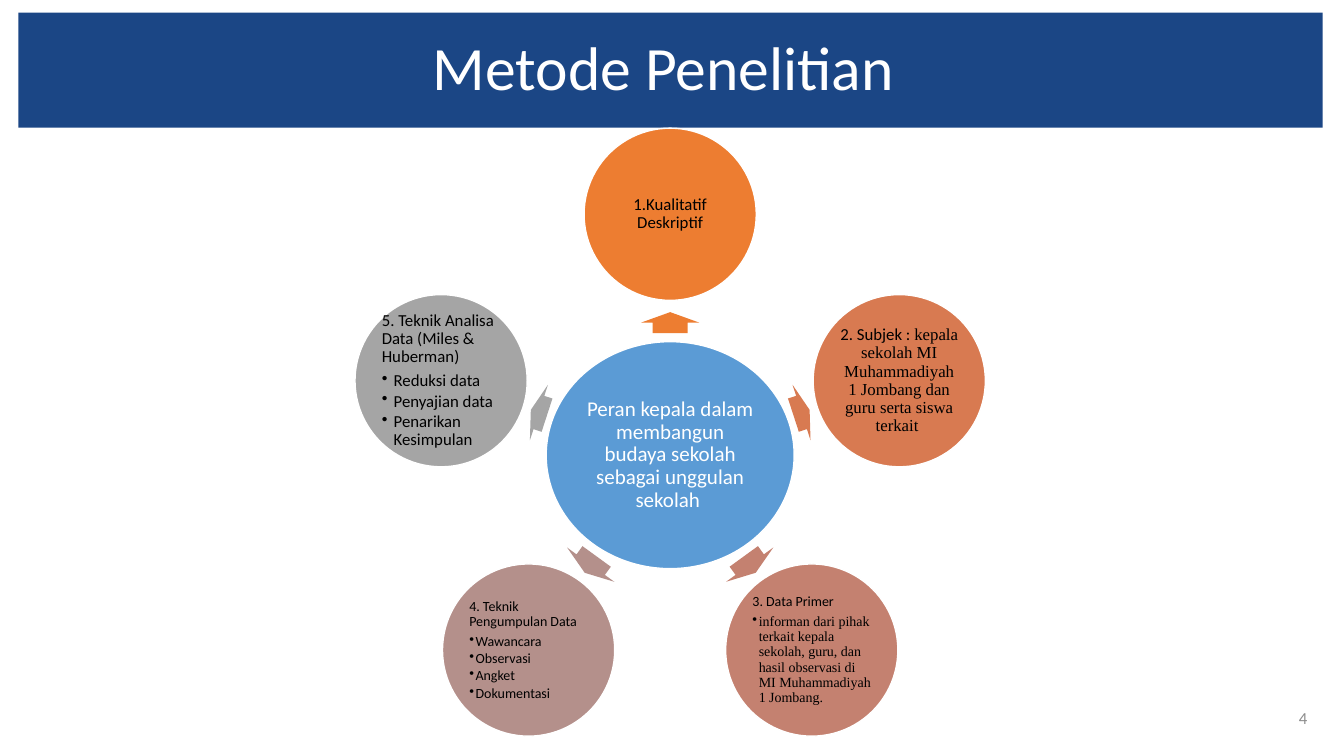
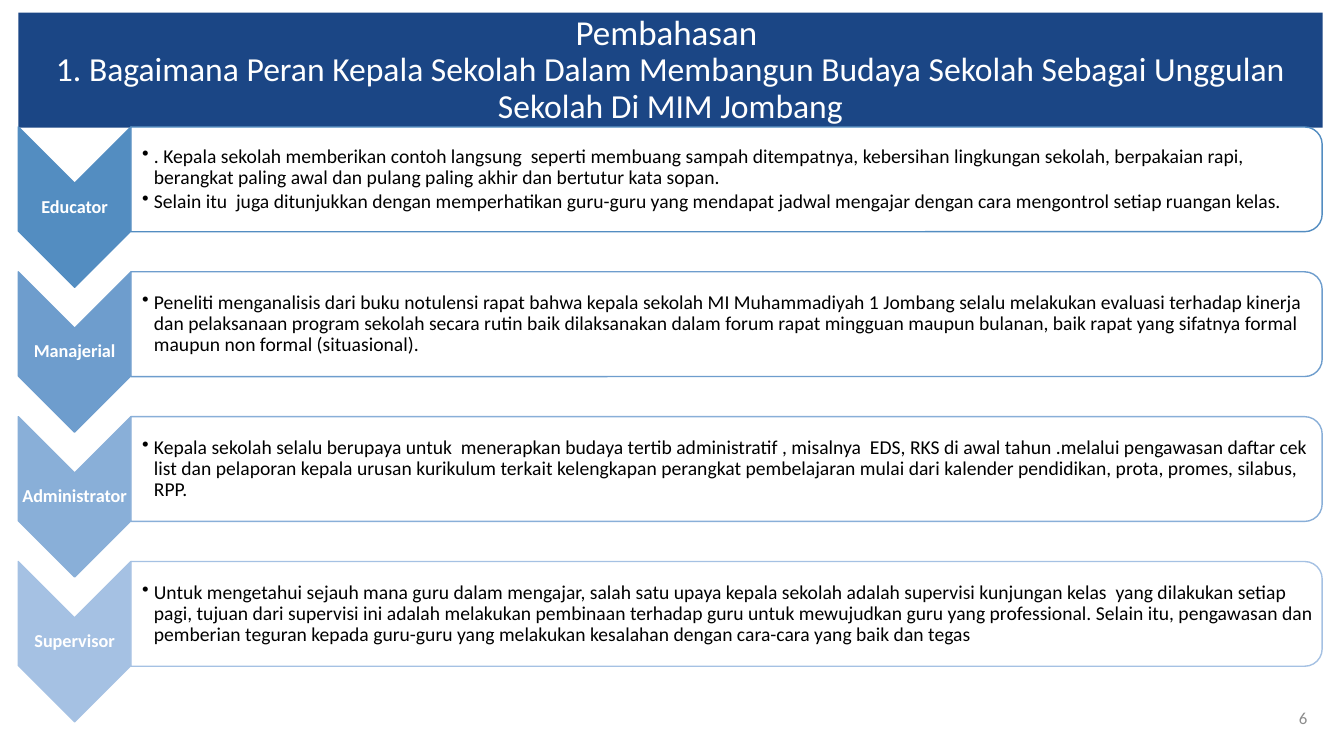
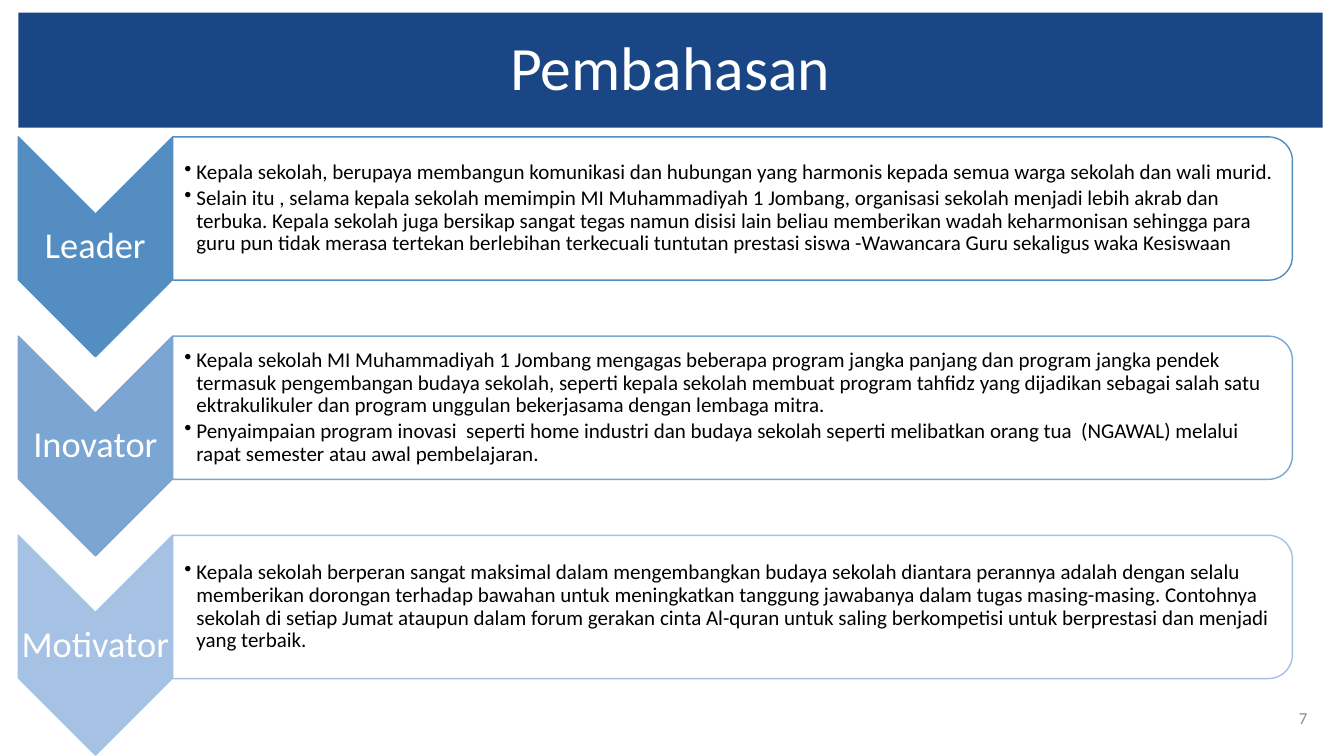
from dataclasses import dataclass
from math import cos, radians, sin

from lxml.etree import SubElement
from pptx import Presentation
from pptx.dml.color import RGBColor
from pptx.enum.shapes import MSO_SHAPE as Kind
from pptx.enum.text import MSO_ANCHOR as Anchor, MSO_AUTO_SIZE as Fit, PP_ALIGN as Align
from pptx.oxml.ns import qn
from pptx.util import Cm, Pt

SANS, SERIF = "Calibri", "Times New Roman"
WHITE, BLACK, NAVY, GREY, BLUE = "FFFFFF", "000000", "1B4685", "8C8C8C", "5B9BD5"
LEFT = 0.46
HUB_X, HUB_Y, RING = 16.89, 11.47, 6.07


@dataclass
class Para:
    text: str = ""
    serif: str = ""
    dot: bool = False


@dataclass
class Node:
    fill: str
    reach: float
    depth: float
    paras: list
    size: int = 12
    align: Align = Align.LEFT
    dent: float = 0.3


@dataclass
class Plan:
    top: float
    step: float
    wide: float
    tall: float
    long: float
    high: float
    label: int
    bold: bool
    size: int


def hue(code):
    return RGBColor.from_string(code)


def paint(shape, fill, line):
    shape.shadow.inherit = False
    shape.fill.solid()
    shape.fill.fore_color.rgb = hue(fill)
    shape.line.color.rgb = hue(line)
    shape.line.width = Pt(1)


def fade(shape, share):
    tone = shape.fill._xPr.find(qn("a:solidFill"))[0]
    SubElement(tone, qn("a:alpha")).set("val", str(share * 1000))


def mark(para, dent):
    para.level = 1
    props = para._p.get_or_add_pPr()
    props.set("marL", str(Cm(dent)))
    props.set("indent", str(-Cm(dent)))
    SubElement(props, qn("a:buChar")).set("char", "•")


def style(run, size, code, font=SANS, bold=False):
    run.font.size = Pt(size)
    run.font.name = font
    run.font.bold = bold
    run.font.color.rgb = hue(code)


def inset(frame, edge, left=None):
    frame.word_wrap = True
    frame.vertical_anchor = Anchor.MIDDLE
    frame.margin_left = Cm(edge if left is None else left)
    frame.margin_right = frame.margin_top = frame.margin_bottom = Cm(edge)


def write(frame, paras, size, code, align, dent=0.3, bold=False):
    for i, item in enumerate(paras):
        para = frame.add_paragraph() if i else frame.paragraphs[0]
        para.text = item.text
        if item.serif:
            para.add_run().text = item.serif
        if item.dot:
            mark(para, dent)
        para.alignment = align
        para.line_spacing = 0.9
        para.space_before = Pt(0)
        para.space_after = Pt(size * (0.15 if item.dot else 0.35))
        for run in para.runs:
            style(run, size, code, SERIF if run.text == item.serif else SANS, bold)


def place(slide, kind, x, y, wide, high, fill, line, turn=0):
    shape = slide.shapes.add_shape(
        kind, Cm(x - wide / 2), Cm(y - high / 2), Cm(wide), Cm(high))
    shape.rotation = turn
    paint(shape, fill, line)
    return shape


def textbox(slide, x, y, wide, high):
    return slide.shapes.add_textbox(Cm(x), Cm(y), Cm(wide), Cm(high)).text_frame


def start(deck, title, sizes, number):
    slide = deck.slides.add_slide(deck.slide_layouts[5])
    band = slide.shapes.title
    band.left, band.top, band.width, band.height = Cm(LEFT), Cm(0.32), Cm(32.87), Cm(2.9)
    band.fill.solid()
    band.fill.fore_color.rgb = hue(NAVY)
    frame = band.text_frame
    frame.text = title
    frame.auto_size = Fit.NONE
    frame.vertical_anchor = Anchor.MIDDLE
    para = frame.paragraphs[0]
    para.alignment = Align.CENTER
    para.line_spacing = 0.9
    for run, size in zip(para.runs, sizes):
        style(run, size, WHITE)
    foot = textbox(slide, 31.75, 17.58, 1.45, 1.02)
    foot.text = number
    foot.vertical_anchor = Anchor.MIDDLE
    foot.paragraphs[0].alignment = Align.RIGHT
    style(foot.paragraphs[0].runs[0], 12, GREY)
    return slide


def disc(slide, x, y, wide, high, fill, paras, size, code, align, dent=0.3):
    frame = place(slide, Kind.OVAL, x, y, wide, high, fill, WHITE).text_frame
    inset(frame, 0.04)
    write(frame, paras, size, code, align, dent)


def wheel(slide, hub, nodes):
    disc(slide, HUB_X, HUB_Y, 6.25, 5.72, BLUE, [Para(hub)], 15, WHITE, Align.CENTER)
    for i, node in enumerate(nodes):
        turn = 270 + i * 360 / len(nodes)
        dx, dy = cos(radians(turn)), sin(radians(turn))
        arrow = place(slide, Kind.RIGHT_ARROW, HUB_X + node.reach * dx,
                      HUB_Y + node.reach * dy, node.depth, 1.47,
                      node.fill, node.fill, turn % 360)
        arrow.adjustments[0] = 0.6
        arrow.line.fill.background()
        disc(slide, HUB_X + RING * dx, HUB_Y + RING * dy, 4.34, 4.34, node.fill,
             node.paras, node.size, BLACK, node.align, node.dent)


def ladder(slide, plan, rows):
    edge = LEFT + plan.wide
    for i, (name, shade, points) in enumerate(rows):
        top = plan.top + i * plan.step
        mid = top + plan.tall / 2
        place(slide, Kind.CHEVRON, LEFT + plan.wide / 2, mid,
              plan.tall, plan.wide, shade, shade, 90)
        label = textbox(slide, LEFT, mid - 0.6, plan.wide, 1.2)
        inset(label, 0.03)
        write(label, [Para(name)], plan.label, WHITE, Align.CENTER, bold=plan.bold)
        panel = place(slide, Kind.ROUND_2_SAME_RECTANGLE, edge + plan.long / 2,
                      top + plan.high / 2, plan.high, plan.long, WHITE, shade, 90)
        fade(panel, 90)
        body = textbox(slide, edge, top + 0.14, plan.long - 0.15, plan.high - 0.28)
        inset(body, 0.03, plan.size * 0.02)
        write(body, [Para(point, dot=True) for point in points],
              plan.size, BLACK, Align.LEFT)


def main():
    deck = Presentation()
    deck.slide_width, deck.slide_height = Cm(33.87), Cm(19.05)

    slide = start(deck, "Metode Penelitian ", [44], "4")
    wheel(slide, "Peran kepala dalam membangun budaya sekolah sebagai unggulan sekolah ", [
        Node("ED7D31", 3.34, 0.53, [Para("1.Kualitatif Deskriptif")], align=Align.CENTER),
        Node("D87A51", 3.48, 0.43, [Para(
            "2. Subjek : ",
            "kepala sekolah MI Muhammadiyah 1 Jombang dan guru serta siswa terkait ")],
            align=Align.CENTER),
        Node("C48170", 3.41, 0.51, [Para("3. Data Primer"), Para(
            serif="informan dari pihak terkait kepala sekolah, guru, dan hasil observasi "
                  "di MI Muhammadiyah 1 Jombang.", dot=True)], 10, dent=0.16),
        Node("B4908B", 3.41, 0.51, [Para("4. Teknik Pengumpulan Data")] + [
            Para(text, dot=True)
            for text in ("Wawancara", "Observasi", "Angket", "Dokumentasi")],
            10, dent=0.16),
        Node("A5A5A5", 3.48, 0.43, [Para("5. Teknik Analisa Data (Miles & Huberman)")] + [
            Para(text, dot=True)
            for text in ("Reduksi data", "Penyajian data", "Penarikan Kesimpulan")]),
    ])

    slide = start(deck, "Pembahasan \v1. Bagaimana Peran Kepala Sekolah Dalam Membangun "
                  "Budaya Sekolah Sebagai Unggulan Sekolah Di MIM Jombang", [25, 24], "6")
    ladder(slide, Plan(3.2, 3.65, 2.84, 4.04, 30.02, 2.64, 13, True, 14), [
        ("Educator", "538DC1", [
            ". Kepala sekolah memberikan contoh langsung  seperti membuang sampah "
            "ditempatnya, kebersihan lingkungan sekolah, berpakaian rapi, berangkat paling "
            "awal dan pulang paling akhir dan bertutur kata sopan.",
            "Selain itu  juga ditunjukkan dengan memperhatikan guru-guru yang mendapat "
            "jadwal mengajar dengan cara mengontrol setiap ruangan kelas."]),
        ("Manajerial", "6E9DCD", [
            "Peneliti menganalisis dari buku notulensi rapat bahwa kepala sekolah MI "
            "Muhammadiyah 1 Jombang selalu melakukan evaluasi terhadap kinerja dan "
            "pelaksanaan program sekolah secara rutin baik dilaksanakan dalam forum rapat "
            "mingguan maupun bulanan, baik rapat yang sifatnya formal maupun non formal "
            "(situasional)."]),
        ("Administrator", "89AFD8", [
            "Kepala sekolah selalu berupaya untuk  menerapkan budaya tertib administratif , "
            "misalnya  EDS, RKS di awal tahun .melalui pengawasan daftar cek list dan "
            "pelaporan kepala urusan kurikulum terkait kelengkapan perangkat pembelajaran "
            "mulai dari kalender pendidikan, prota, promes, silabus, RPP."]),
        ("Supervisor", "A5C1E3", [
            "Untuk mengetahui sejauh mana guru dalam mengajar, salah satu upaya kepala "
            "sekolah adalah supervisi kunjungan kelas  yang dilakukan setiap pagi, tujuan "
            "dari supervisi ini adalah melakukan pembinaan terhadap guru untuk mewujudkan "
            "guru yang professional. Selain itu, pengawasan dan pemberian teguran kepada "
            "guru-guru yang melakukan kesalahan dengan cara-cara yang baik dan tegas"]),
    ])

    slide = start(deck, "Pembahasan", [44], "7")
    ladder(slide, Plan(3.45, 5.02, 3.89, 5.54, 28.22, 3.61, 26, False, 15), [
        ("Leader", "538DC1", [
            "Kepala sekolah, berupaya membangun komunikasi dan hubungan yang harmonis "
            "kepada semua warga sekolah dan wali murid.",
            "Selain itu , selama kepala sekolah memimpin MI Muhammadiyah 1 Jombang, "
            "organisasi sekolah menjadi lebih akrab dan terbuka. Kepala sekolah juga "
            "bersikap sangat tegas namun disisi lain beliau memberikan wadah keharmonisan "
            "sehingga para guru pun tidak merasa tertekan berlebihan terkecuali tuntutan "
            "prestasi siswa -Wawancara Guru sekaligus waka Kesiswaan"]),
        ("Inovator", "7BA6D3", [
            "Kepala sekolah MI Muhammadiyah 1 Jombang mengagas beberapa program jangka "
            "panjang dan program jangka pendek termasuk pengembangan budaya sekolah, "
            "seperti kepala sekolah membuat program tahfidz yang dijadikan sebagai salah "
            "satu ektrakulikuler dan program unggulan bekerjasama dengan lembaga mitra.",
            "Penyaimpaian program inovasi  seperti home industri dan budaya sekolah seperti "
            "melibatkan orang tua  (NGAWAL) melalui rapat semester atau awal pembelajaran."]),
        ("Motivator", "A5C1E3", [
            "Kepala sekolah berperan sangat maksimal dalam mengembangkan budaya sekolah "
            "diantara perannya adalah dengan selalu memberikan dorongan terhadap bawahan "
            "untuk meningkatkan tanggung jawabanya dalam tugas masing-masing. Contohnya "
            "sekolah di setiap Jumat ataupun dalam forum gerakan cinta Al-quran untuk "
            "saling berkompetisi untuk berprestasi dan menjadi yang terbaik."]),
    ])
    deck.save("out.pptx")


if __name__ == "__main__":
    main()
